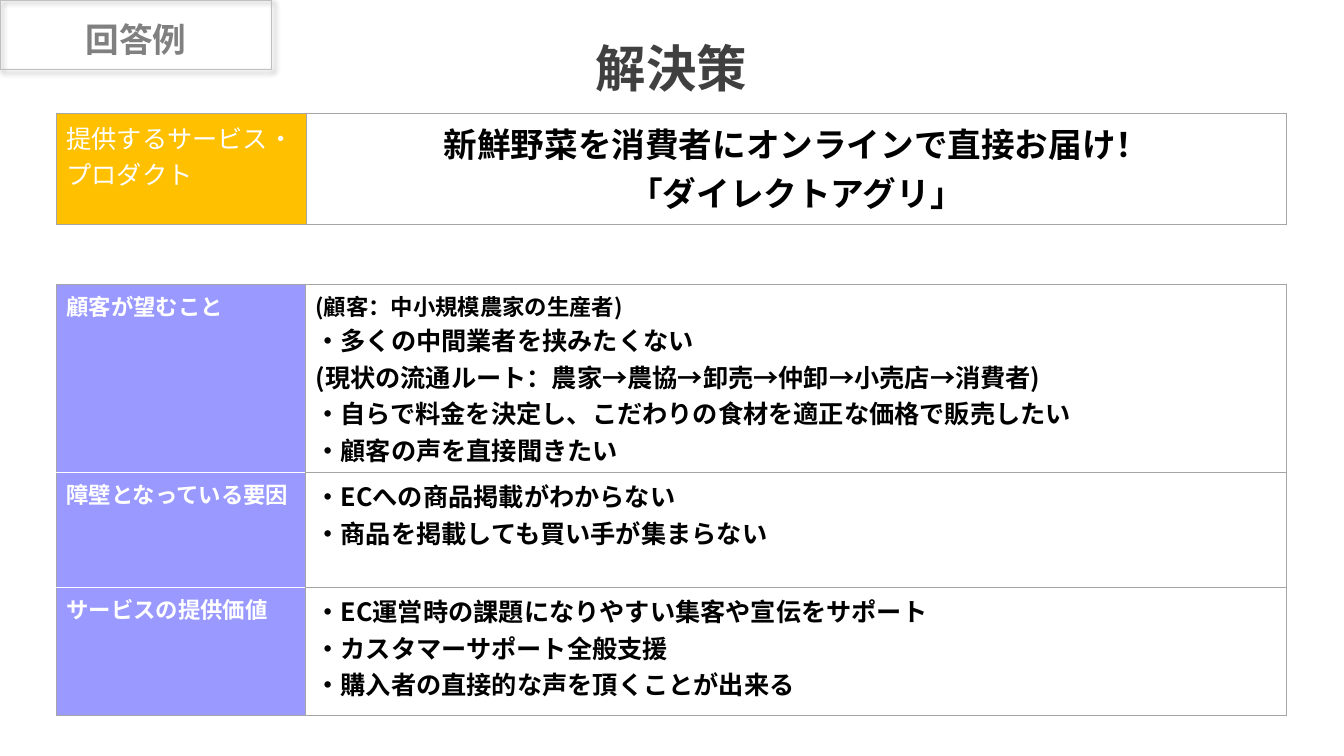
"""Build the solution slide with its answer tag and two tables."""
from lxml import etree
from pptx import Presentation
from pptx.dml.color import RGBColor
from pptx.enum.shapes import MSO_SHAPE
from pptx.enum.text import MSO_ANCHOR, PP_ALIGN
from pptx.oxml.ns import qn
from pptx.util import Inches, Pt

RECTANGLE = MSO_SHAPE.RECTANGLE
BOTTOM = MSO_ANCHOR.BOTTOM
LEFT, CENTER = PP_ALIGN.LEFT, PP_ALIGN.CENTER

FONT = "Noto Sans CJK JP"
WHITE = RGBColor(0xFF, 0xFF, 0xFF)
BLACK = RGBColor(0x00, 0x00, 0x00)
TITLE_GRAY = RGBColor(0x40, 0x40, 0x40)
TAG_GRAY = RGBColor(0x80, 0x80, 0x80)
TAG_LINE = RGBColor(0xBF, 0xBF, 0xBF)
BORDER_GRAY = RGBColor(0xA6, 0xA6, 0xA6)
AMBER = RGBColor(0xFF, 0xC0, 0x00)
VIOLET = RGBColor(0x99, 0x99, 0xFF)

MARGIN, CONTENT_WIDTH = 0.56, 12.2
TITLE_STYLE = {"size": Pt(36), "bold": True, "color": TITLE_GRAY}
TAG_STYLE = {"size": Pt(24), "bold": True, "color": TAG_GRAY}
SERVICE_LABEL = {"size": Pt(18), "bold": False, "color": WHITE}
SERVICE_NAME = {"size": Pt(24), "bold": True, "color": BLACK}
ROW_LABEL = {"size": Pt(16), "bold": True, "color": WHITE}
CUSTOMER = {"size": Pt(16), "bold": True, "color": BLACK}
POINT = {"size": Pt(18), "bold": True, "color": BLACK}

SOLUTION_ROWS = [
    (1.86, "顧客が望むこと", [
        ("(顧客：中小規模農家の生産者)", CUSTOMER),
        ("・多くの中間業者を挟みたくない", POINT),
        ("(現状の流通ルート：農家→農協→卸売→仲卸→小売店→消費者)", POINT),
        ("・自らで料金を決定し、こだわりの食材を適正な価格で販売したい", POINT),
        ("・顧客の声を直接聞きたい", POINT),
    ]),
    (1.14, "障壁となっている要因", [
        ("・ECへの商品掲載がわからない", POINT),
        ("・商品を掲載しても買い手が集まらない", POINT),
    ]),
    (1.27, "サービスの提供価値", [
        ("・EC運営時の課題になりやすい集客や宣伝をサポート", POINT),
        ("・カスタマーサポート全般支援", POINT),
        ("・購入者の直接的な声を頂くことが出来る", POINT),
    ]),
]


def write_lines(text_frame, lines, alignment):
    """Write (text, style) pairs as paragraphs."""
    for index, (text, style) in enumerate(lines):
        paragraph = text_frame.paragraphs[0] if index == 0 else text_frame.add_paragraph()
        paragraph.alignment = alignment
        run = paragraph.add_run()
        run.text = text
        run.font.color.rgb = style["color"]
        for name, value in {"name": FONT, "size": style["size"], "bold": style["bold"]}.items():
            setattr(run.font, name, value)
        etree.SubElement(run.font._element, qn("a:ea"), typeface=FONT)


def set_borders(cell, top=BORDER_GRAY, bottom=BORDER_GRAY):
    """Draw thin lines on the four sides of a cell."""
    sides = {"lnL": BORDER_GRAY, "lnR": BORDER_GRAY, "lnT": top, "lnB": bottom}
    properties = cell._tc.get_or_add_tcPr()
    for position, (side, color) in enumerate(sides.items()):
        line = etree.Element(qn(f"a:{side}"), w=str(Pt(0.75)))
        fill = etree.SubElement(line, qn("a:solidFill"))
        etree.SubElement(fill, qn("a:srgbClr"), val=str(color))
        properties.insert(position, line)


def fill_cell(cell, lines, color, alignment=LEFT):
    """Give a cell its text and fill."""
    write_lines(cell.text_frame, lines, alignment)
    cell.fill.solid()
    cell.fill.fore_color.rgb = color


def add_plain_table(slide, top, label_width, heights):
    """Add a two-column table without a banded style."""
    frame = slide.shapes.add_table(len(heights), 2, Inches(MARGIN), Inches(top),
                                   Inches(CONTENT_WIDTH), Inches(sum(heights)))
    table = frame.table
    table.first_row = table.horz_banding = False
    for column, width in zip(table.columns, (label_width, CONTENT_WIDTH - label_width)):
        column.width = Inches(width)
    for row, height in zip(table.rows, heights):
        row.height = Inches(height)
    return table


def add_title(slide):
    """Place and format the slide title."""
    title = slide.shapes.title
    title.left, title.top = Inches(MARGIN), Inches(0.29)
    title.width, title.height = Inches(CONTENT_WIDTH), Inches(0.69)
    frame_format = {"vertical_anchor": BOTTOM, "margin_left": 0, "margin_top": 0,
                    "margin_right": 0, "margin_bottom": 0, "word_wrap": True}
    for name, value in frame_format.items():
        setattr(title.text_frame, name, value)
    write_lines(title.text_frame, [("解決策", TITLE_STYLE)], CENTER)
    title.text_frame.paragraphs[0].line_spacing = 0.9


def add_service_table(slide):
    """Add the table that names the service."""
    table = add_plain_table(slide, 1.13, 2.48, [1.1])
    label, service = table.cell(0, 0), table.cell(0, 1)
    fill_cell(label, [("提供するサービス・プロダクト", SERVICE_LABEL)], AMBER)
    fill_cell(service, [("新鮮野菜を消費者にオンラインで直接お届け！", SERVICE_NAME),
                        ("「ダイレクトアグリ」", SERVICE_NAME)], WHITE, CENTER)
    set_borders(label)
    set_borders(service)


def add_solution_table(slide):
    """Add the table of wishes, barriers and values."""
    table = add_plain_table(slide, 2.82, 2.47, [height for height, _, _ in SOLUTION_ROWS])
    last = len(SOLUTION_ROWS) - 1
    for index, (_, heading, lines) in enumerate(SOLUTION_ROWS):
        label, detail = table.cell(index, 0), table.cell(index, 1)
        fill_cell(label, [(heading, ROW_LABEL)], VIOLET)
        fill_cell(detail, lines, WHITE)
        set_borders(label, BORDER_GRAY if index == 0 else WHITE,
                    BORDER_GRAY if index == last else WHITE)
        set_borders(detail)


def add_answer_tag(slide):
    """Add the shadowed frame and its caption as a group."""
    group = slide.shapes.add_group_shape()
    frame = group.shapes.add_shape(RECTANGLE, 0, 0, Inches(2.69), Inches(0.69))
    frame.fill.background()
    frame.line.color.rgb = TAG_LINE
    frame.line.width = Pt(1)
    frame.shadow.inherit = False
    effects = frame._element.spPr.find(qn("a:effectLst"))
    shadow = etree.SubElement(effects, qn("a:outerShdw"), blurRad=str(Pt(4)),
                              dist=str(Pt(3)), dir="2700000", algn="tl", rotWithShape="0")
    color = etree.SubElement(shadow, qn("a:srgbClr"), val=str(BLACK))
    etree.SubElement(color, qn("a:alpha"), val="40000")
    caption = group.shapes.add_textbox(Inches(0.35), Inches(0.14), Inches(2), Inches(0.5))
    caption.text_frame.word_wrap = True
    write_lines(caption.text_frame, [("回答例", TAG_STYLE)], CENTER)


def main():
    """Build and save the presentation."""
    presentation = Presentation()
    presentation.slide_width, presentation.slide_height = Inches(13.33), Inches(7.5)
    slide = presentation.slides.add_slide(presentation.slide_layouts[5])
    add_title(slide)
    add_service_table(slide)
    add_solution_table(slide)
    add_answer_tag(slide)
    presentation.save("out.pptx")


if __name__ == "__main__":
    main()
